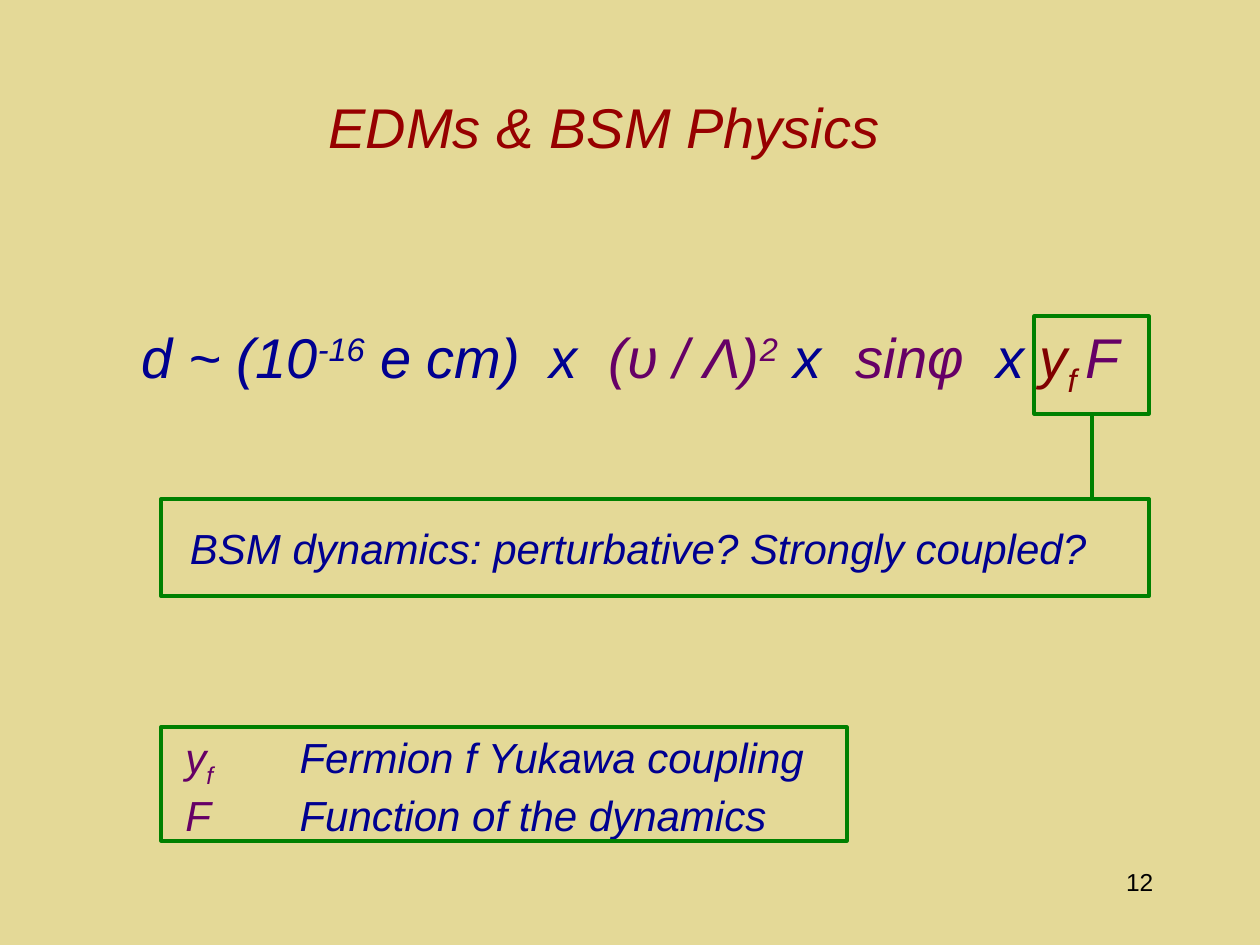
from dataclasses import dataclass

from lxml.etree import SubElement
from pptx import Presentation
from pptx.dml.color import RGBColor
from pptx.enum.shapes import MSO_CONNECTOR as Connector, MSO_SHAPE as Shape
from pptx.enum.text import MSO_ANCHOR as Anchor, MSO_AUTO_SIZE as AutoSize, PP_ALIGN as Align
from pptx.oxml.ns import qn
from pptx.util import Cm, Pt


@dataclass(frozen=True)
class Theme:
    font: str = "Arial"
    background: RGBColor = RGBColor(0xE4, 0xD9, 0x97)
    title: RGBColor = RGBColor(0x97, 0x00, 0x00)
    text: RGBColor = RGBColor(0x00, 0x00, 0x90)
    symbol: RGBColor = RGBColor(0x66, 0x00, 0x66)
    coupling: RGBColor = RGBColor(0x80, 0x00, 0x00)
    frame: RGBColor = RGBColor(0x00, 0x80, 0x00)
    number: RGBColor = RGBColor(0x00, 0x00, 0x00)
    large: Pt = Pt(32)
    medium: Pt = Pt(24)
    small: Pt = Pt(14)
    line: Pt = Pt(2.25)


THEME = Theme()
SUPERSCRIPT = 30000
SUBSCRIPT = -25000


def style(paragraph, size, color=None, italic=True):
    font = paragraph.font
    font.name, font.size, font.italic = THEME.font, size, italic
    if color is not None:
        font.color.rgb = color


def add_tabs(paragraph, stops):
    tabs = SubElement(paragraph._p.get_or_add_pPr(), qn("a:tabLst"))
    for stop in stops:
        SubElement(tabs, qn("a:tab"), pos=str(Cm(stop)), algn="l")


def add_text(slide, box, lines, size, tabs=(), align=Align.LEFT, italic=True):
    frame = slide.shapes.add_textbox(*map(Cm, box)).text_frame
    frame.word_wrap = True
    for index, parts in enumerate(lines):
        paragraph = frame.add_paragraph() if index else frame.paragraphs[0]
        paragraph.alignment = align
        if tabs:
            add_tabs(paragraph, tabs)
        style(paragraph, size, italic=italic)
        for words, color, *baseline in parts:
            run = paragraph.add_run()
            run.text = words
            run.font.color.rgb = color
            if baseline:
                run._r.get_or_add_rPr().set("baseline", str(baseline[0]))


def add_title(slide, words):
    title = slide.shapes.title
    title.left, title.top, title.width, title.height = map(Cm, (2.34, 1.7, 19.68, 1.7))
    frame = title.text_frame
    frame.text = words
    frame.auto_size = AutoSize.NONE
    frame.vertical_anchor = Anchor.MIDDLE
    frame.paragraphs[0].alignment = Align.CENTER
    style(frame.paragraphs[0], THEME.large, THEME.title)


def add_frame(slide, box):
    frame = slide.shapes.add_shape(Shape.RECTANGLE, *map(Cm, box))
    frame.shadow.inherit = False
    frame.fill.background()
    frame.line.color.rgb = THEME.frame
    frame.line.width = THEME.line
    return frame


def add_drop_line(slide, upper, lower):
    x = upper.left + upper.width // 2
    link = slide.shapes.add_connector(
        Connector.STRAIGHT, x, upper.top + upper.height, x, lower.top)
    link.begin_connect(upper, 2)
    link.line.color.rgb = THEME.frame
    link.line.width = THEME.line
    SubElement(link._element.spPr, qn("a:effectLst"))


def main():
    deck = Presentation()
    deck.slide_width, deck.slide_height = Cm(25.4), Cm(19.05)
    slide = deck.slides.add_slide(deck.slide_layouts[5])
    slide.background.fill.solid()
    slide.background.fill.fore_color.rgb = THEME.background
    text, symbol = THEME.text, THEME.symbol

    add_text(slide, (18.21, 17.35, 5.29, 1.27), [[("12", THEME.number)]],
             THEME.small, align=Align.RIGHT, italic=False)
    add_title(slide, "EDMs & BSM Physics")

    formula = [
        ("d ~ (10", text), ("-16", text, SUPERSCRIPT), (" e cm)\tx\t", text),
        ("(υ / Λ)", symbol), ("2", symbol, SUPERSCRIPT), (" x\t", text),
        ("sinφ\t", symbol), ("x ", text), ("y", THEME.coupling),
        ("f ", THEME.coupling, SUBSCRIPT), ("F", symbol),
    ]
    add_text(slide, (2.61, 6.38, 21, 1.63), [formula], THEME.large,
             tabs=(8.22, 9.41, 14.39, 17.22))
    add_text(slide, (3.58, 10.41, 19.58, 1.27),
             [[("BSM dynamics: perturbative? Strongly coupled?", text)]], THEME.medium)

    coupling_frame = add_frame(slide, (20.85, 6.38, 2.31, 1.96))
    dynamics_frame = add_frame(slide, (3.25, 10.06, 19.91, 1.96))
    add_drop_line(slide, coupling_frame, dynamics_frame)

    legend = [
        [("y", symbol), ("f", symbol, SUBSCRIPT), ("\tFermion f Yukawa coupling", text)],
        [("F", symbol), ("\tFunction of the dynamics", text)],
    ]
    add_text(slide, (3.49, 14.63, 19.32, 2.31), legend, THEME.medium, tabs=(2.3,))
    add_frame(slide, (3.25, 14.66, 13.82, 2.29))

    deck.save("out.pptx")


if __name__ == "__main__":
    main()
